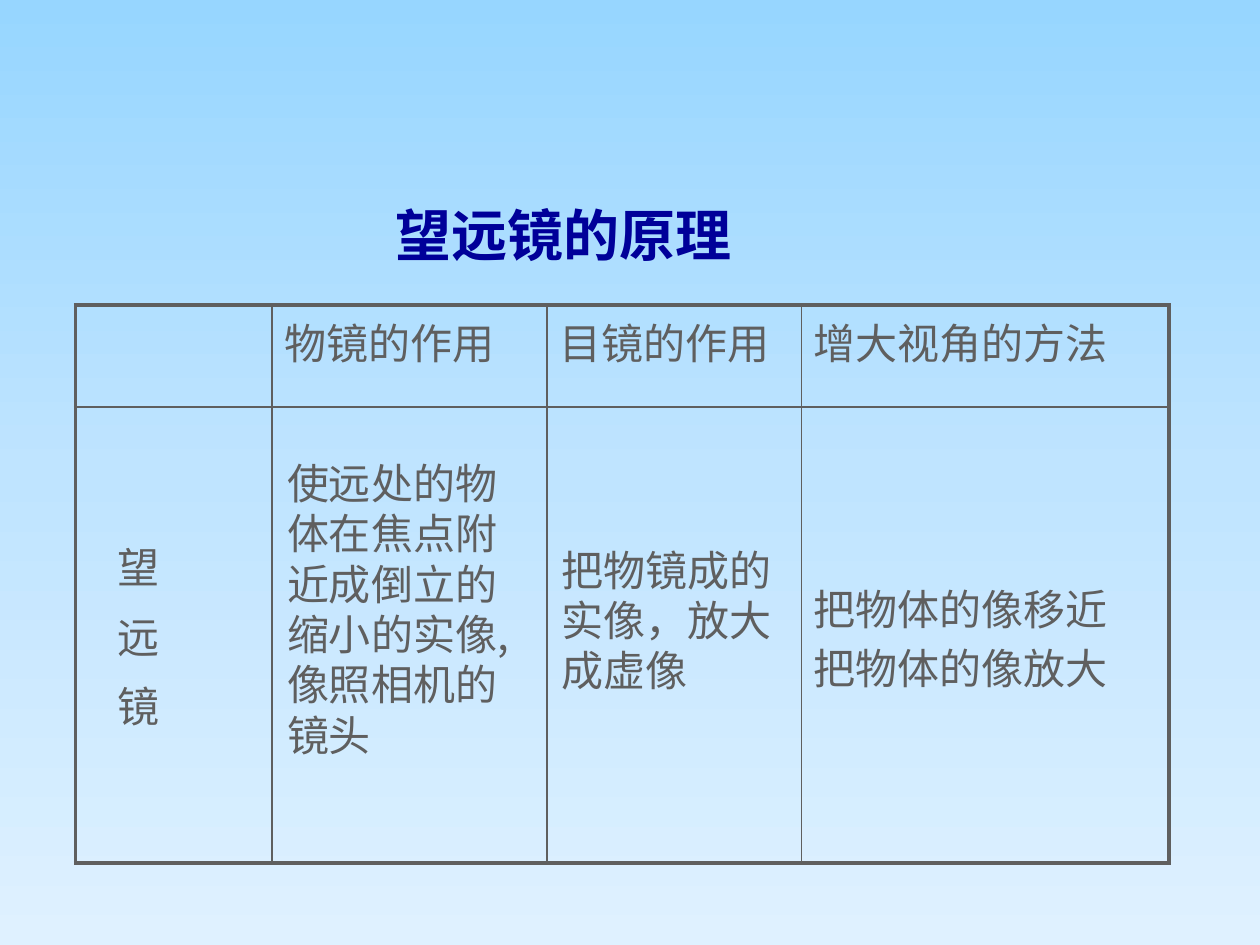
from copy import deepcopy
from itertools import accumulate

from lxml.etree import SubElement
from pptx import Presentation
from pptx.dml.color import RGBColor
from pptx.enum.text import MSO_ANCHOR, PP_ALIGN
from pptx.oxml.ns import qn
from pptx.util import Inches, Pt

GREY = RGBColor(0x5F, 0x5F, 0x5F)
NAVY = RGBColor(0x00, 0x00, 0x99)
SKY = [RGBColor(0x97, 0xD6, 0xFF), RGBColor(0xBF, 0xE4, 0xFF),
       RGBColor(0xDF, 0xF1, 0xFF)]
SANS = "Noto Sans CJK SC"
COLS = [1.56, 2.18, 2.02, 2.92]
ROWS = [0.81, 3.62]
THIN, THICK = Pt(1), Pt(2.25)
HEADS = ["物镜的作用", "目镜的作用", "增大视角的方法"]
# Each note: lines, shift from its column, shift from the row top, width, height
NOTES = [
    (["使远处的物体在焦点附近成倒立的缩小的实像,像照相机的镜头"], 0.02, 0.35, 2.07, 2.5),
    (["把物镜成的实像，放大成虚像"], 0.02, 1.04, 2.07, 1.3),
    (["把物体的像移近", "把物体的像放大"], 0, 1.35, 2.92, 0.98),
]


def paint(slide):
    """Fill the background with a three-stop gradient, top to bottom."""
    fill = slide.background.fill
    fill.gradient()
    fill.gradient_angle = 270
    first = next(slide.element.iter(qn("a:gs")))
    first.addnext(deepcopy(first))
    for stop, color, place in zip(fill.gradient_stops, SKY, (0, 0.5, 1)):
        stop.color.rgb = color
        stop.position = place


def write(frame, lines, font=SANS, size=24, color=GREY, bold=False, pitch=None):
    for i, line in enumerate(lines):
        para = frame.paragraphs[0] if i == 0 else frame.add_paragraph()
        para.alignment = PP_ALIGN.LEFT
        para.line_spacing = pitch
        if i:
            para.space_before = Pt(size * 0.2)
        run = para.add_run()
        run.text = line
        run.font.name, run.font.size = font, Pt(size)
        run.font.bold, run.font.color.rgb = bold, color
        SubElement(run.font._element, qn("a:ea"), typeface=SANS)


def edge(cell, widths):
    """Draw the left, right, top and bottom borders of a cell."""
    props = cell._tc.get_or_add_tcPr()
    for i, (side, width) in enumerate(zip("LRTB", widths)):
        line = SubElement(props, qn(f"a:ln{side}"), w=str(width))
        fill = SubElement(line, qn("a:solidFill"))
        SubElement(fill, qn("a:srgbClr"), val=str(GREY))
        props.insert(i, line)


def add_title(slide, x, y, w, h):
    title = slide.shapes.title
    title.left, title.top, title.width, title.height = map(Inches, (x, y, w, h))
    title.text_frame.vertical_anchor = MSO_ANCHOR.MIDDLE
    write(title.text_frame, ["望远镜的原理"], size=32, color=NAVY, bold=True)


def add_grid(slide, x, y):
    frame = slide.shapes.add_table(len(ROWS), len(COLS), Inches(x), Inches(y),
                                   Inches(sum(COLS)), Inches(sum(ROWS)))
    table = frame.table
    table.first_row = table.horz_banding = False
    for col, width in zip(table.columns, COLS):
        col.width = Inches(width)
    for row, height in zip(table.rows, ROWS):
        row.height = Inches(height)
    for r in range(len(ROWS)):
        for c in range(len(COLS)):
            cell = table.cell(r, c)
            cell.fill.background()
            outer = (c == 0, c == len(COLS) - 1, r == 0, r == len(ROWS) - 1)
            edge(cell, [THICK if side else THIN for side in outer])
    for c, head in enumerate(HEADS, 1):
        write(table.cell(0, c).text_frame, [head], "Calibri")
    label = table.cell(1, 0)
    label.vertical_anchor = MSO_ANCHOR.MIDDLE
    label.margin_left = Inches(0.33)
    write(label.text_frame, "望远镜", "Calibri")


def add_notes(slide, x, y):
    """Lay the explanations over the second row of the grid at x, y."""
    for left, (lines, dx, dy, w, h) in zip(accumulate(COLS), NOTES):
        box = slide.shapes.add_textbox(Inches(x + left + dx), Inches(y + ROWS[0] + dy),
                                       Inches(w), Inches(h))
        box.text_frame.word_wrap = True
        write(box.text_frame, lines, pitch=Pt(28.8))


def main():
    deck = Presentation()
    deck.slide_width, deck.slide_height = Inches(10), Inches(7.5)
    slide = deck.slides.add_slide(deck.slide_layouts[5])
    paint(slide)
    add_title(slide, 3.04, 1.42, 3.23, 0.87)
    add_grid(slide, 0.6, 2.42)
    add_notes(slide, 0.6, 2.42)
    deck.save("out.pptx")


if __name__ == "__main__":
    main()
